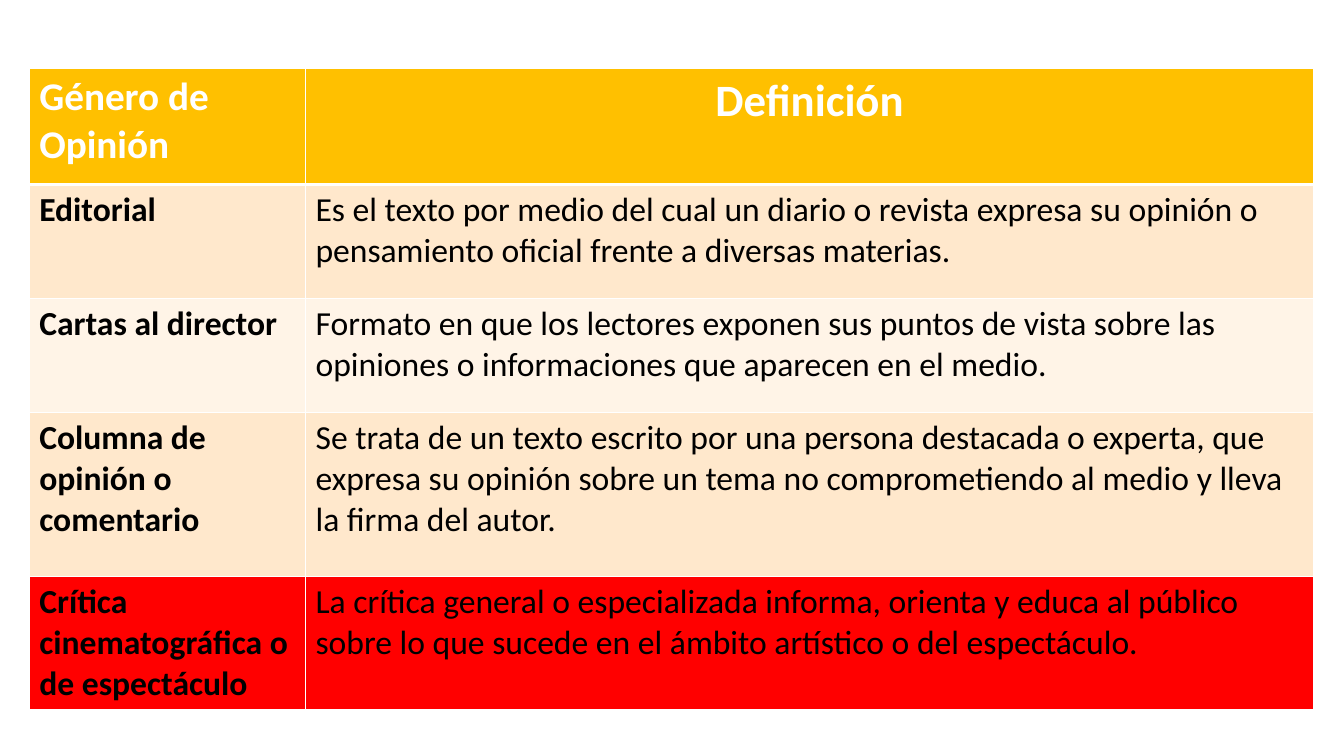
from lxml import etree
from pptx import Presentation
from pptx import util as u
from pptx.dml.color import RGBColor
from pptx.enum import text
from pptx.oxml.ns import qn

PX = 9144
FONT = "Calibri"
COLORS = {
    "white": "FFFFFF",
    "black": "000000",
    "gold": "FFC000",
    "peach": "FFE8CC",
    "cream": "FFF4E7",
    "red": "FF0000",
}
COLUMN_WIDTHS = [274, 1000]
HEADER_HEIGHT = 115
GENRES = [
    ("Editorial",
     "Es el texto por medio del cual un diario o revista expresa su opinión o "
     "pensamiento oficial frente a diversas materias.",
     "peach", 113),
    ("Cartas al director",
     "Formato en que los lectores exponen sus puntos de vista sobre las "
     "opiniones o informaciones que aparecen en el medio.",
     "cream", 113),
    ("Columna de opinión o comentario",
     "Se trata de un texto escrito por una persona destacada o experta, que "
     "expresa su opinión sobre un tema no comprometiendo al medio y lleva la "
     "firma del autor.",
     "peach", 163),
    ("Crítica cinematográfica o de espectáculo",
     "La crítica general o especializada informa, orienta y educa al público "
     "sobre lo que sucede en el ámbito artístico o del espectáculo.",
     "red", 113),
]


def px(length):
    return u.Emu(length * PX)


def rgb(name):
    return RGBColor.from_string(COLORS[name])


def add_borders(cell, bottom):
    properties = cell._tc.get_or_add_tcPr()
    for side, points in (("L", 1), ("R", 1), ("T", 1), ("B", bottom)):
        line = etree.SubElement(properties, qn(f"a:ln{side}"), w=str(u.Pt(points)))
        fill = etree.SubElement(line, qn("a:solidFill"))
        etree.SubElement(fill, qn("a:srgbClr"), val=COLORS["white"])


def write_cell(cell, wording, fill, size, color="black", bold=False,
               align=text.PP_ALIGN.LEFT, bottom=1):
    add_borders(cell, bottom)
    cell.fill.solid()
    cell.fill.fore_color.rgb = rgb(fill)
    paragraph = cell.text_frame.paragraphs[0]
    paragraph.alignment = align
    run = paragraph.add_run()
    run.text = wording
    run.font.name = FONT
    run.font.size = u.Pt(size)
    run.font.bold = bold
    run.font.color.rgb = rgb(color)


def add_genre_table(slide):
    heights = [HEADER_HEIGHT] + [genre[3] for genre in GENRES]
    genre_table = slide.shapes.add_table(
        len(heights), len(COLUMN_WIDTHS), px(29), px(68),
        px(sum(COLUMN_WIDTHS)), px(sum(heights))).table
    for column, width in zip(genre_table.columns, COLUMN_WIDTHS):
        column.width = px(width)
    for row, height in zip(genre_table.rows, heights):
        row.height = px(height)

    write_cell(genre_table.cell(0, 0), "Género de Opinión", "gold", 28,
               "white", True, bottom=3)
    write_cell(genre_table.cell(0, 1), "Definición", "gold", 32,
               "white", True, text.PP_ALIGN.CENTER, bottom=3)
    for index, (genre, definition, fill, _) in enumerate(GENRES, start=1):
        write_cell(genre_table.cell(index, 0), genre, fill, 24, bold=True)
        write_cell(genre_table.cell(index, 1), definition, fill, 24)


def main():
    deck = Presentation()
    deck.slide_width = px(1333)
    deck.slide_height = px(750)
    slide = deck.slides.add_slide(deck.slide_layouts[6])
    add_genre_table(slide)
    deck.save("out.pptx")


if __name__ == "__main__":
    main()
